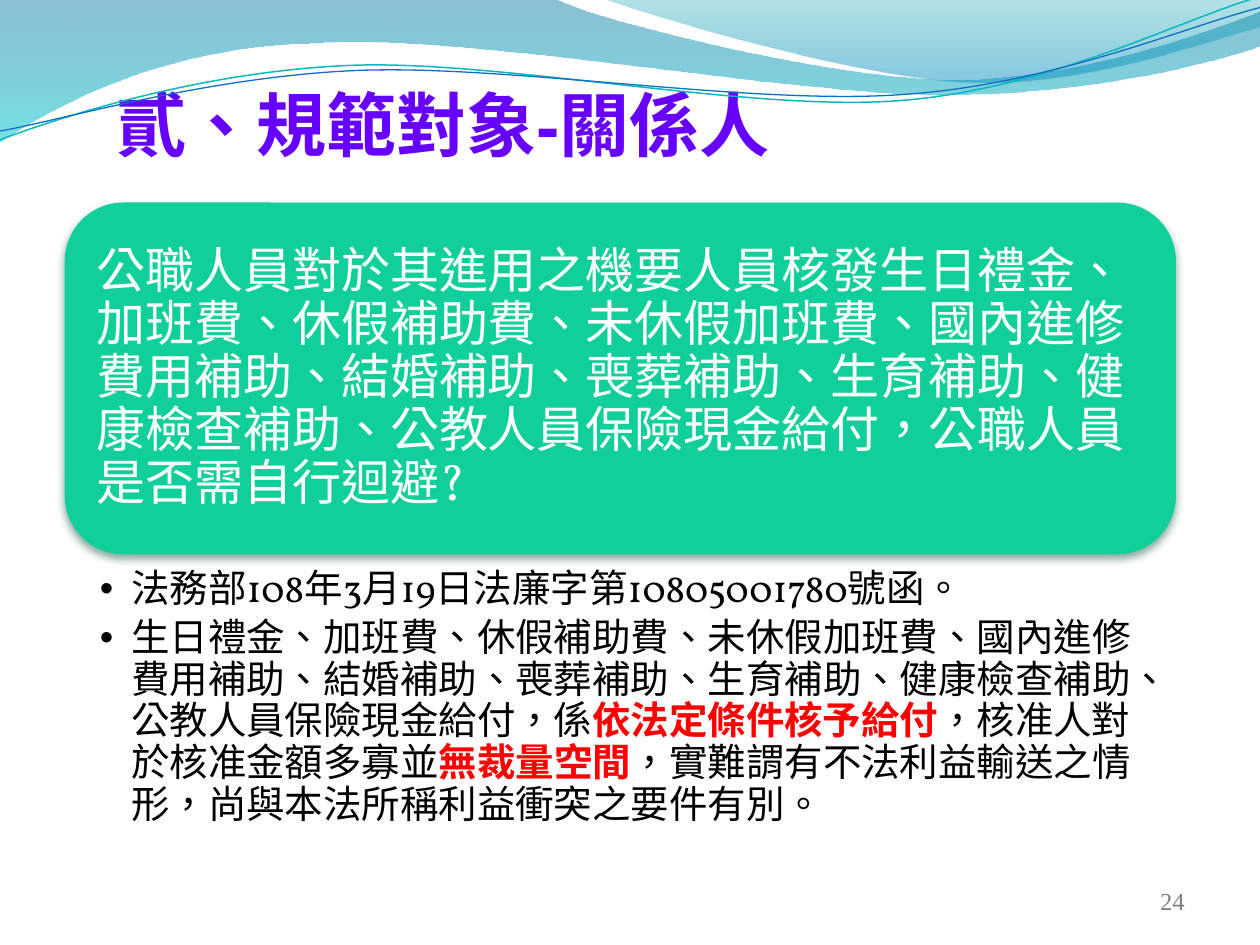
"""Build the slide on related persons and allowance payments."""
from lxml.etree import SubElement
from pptx import Presentation
from pptx.dml.color import RGBColor
from pptx.enum.shapes import MSO_SHAPE
from pptx.enum.text import MSO_ANCHOR, MSO_AUTO_SIZE, PP_ALIGN
from pptx.oxml.ns import qn
from pptx.util import Pt

PURPLE = RGBColor(0x66, 0x00, 0xFF)
GREEN = RGBColor(0x10, 0xCF, 0x9B)
WHITE = RGBColor(0xFF, 0xFF, 0xFF)
BLACK = RGBColor(0, 0, 0)
RED = RGBColor(0xFF, 0, 0)
GRAY = RGBColor(0x7F, 0x7F, 0x7F)
OCEAN = RGBColor(0x00, 0x74, 0xA1)
AQUA = RGBColor(0x00, 0xC6, 0xCF)
TEAL = RGBColor(0x00, 0xA1, 0xA9)
SKY = RGBColor(0x00, 0x8B, 0xBF)
CYAN = RGBColor(0x0A, 0xB8, 0xBF)
BLUE = RGBColor(0x0F, 0x6F, 0xC6)

deck = Presentation()
deck.slide_width, deck.slide_height = Pt(720), Pt(540)
slide = deck.slides.add_slide(deck.slide_layouts[5])
shapes = slide.shapes


def draw(start, parts, close):
    """Draw straight parts (one point) and Bezier parts (three points), in 1/100 inch."""
    pen = shapes.build_freeform(*start, scale=Pt(0.72))
    pen.add_line_segments([dot for part in parts for dot in part], close=close)
    shape = pen.convert_to_shape()
    shape.shadow.inherit = False
    lines = list(shape._element.iter(qn("a:lnTo")))
    for part in parts:
        group, lines = lines[:len(part)], lines[len(part):]
        if len(part) == 3:
            group[0].tag = qn("a:cubicBezTo")
            for line in group[1:]:
                group[0].append(line[0])
                line.getparent().remove(line)
    return shape


def write(para, text, font, size, color):
    """Add a run of Chinese text and set the paragraph font."""
    run = para.add_run()
    run.text = text
    run._r.get_or_add_rPr().set("lang", "zh-TW")
    para.font.name, para.font.size, para.font.color.rgb = font, Pt(size), color
    return run


waves = [
    ((0, 0), [
        [(440, -1)],
        [(476, 17), (664, 63), (758, 63)],
        [(853, 63), (958, 26), (1000, 9)],
        [(1001, 36)],
        [(983, 44), (870, 76), (746, 75)],
        [(622, 75), (382, 28), (257, 34)],
        [(129, 36), (46, 83), (-1, 113)],
    ], [(0, OCEAN, 45), (1, AQUA, 55)]),
    ((479, -1), [
        [(509, 11), (682, 62), (769, 65)],
        [(856, 69), (961, 32), (1000, 21)],
        [(1000, 0)],
    ], [(0, TEAL, 30), (0.8, SKY, 45)]),
]
for start, parts, stops in waves:
    wave = draw(start, parts, True)
    wave.line.fill.background()
    wave.fill.gradient()
    wave.fill.gradient_angle = 270
    for stop, (place, color, alpha) in zip(wave.fill.gradient_stops, stops):
        stop.position, stop.color.rgb = place, color
    for node, (place, color, alpha) in zip(wave._element.spPr.iter(qn("a:srgbClr")), stops):
        SubElement(node, qn("a:alpha"), val=str(alpha * 1000))

curves = [
    ((0, 111), [
        [(48, 93), (158, 57), (277, 52)],
        [(395, 47), (593, 89), (713, 80)],
        [(833, 71), (938, 15), (998, -2)],
    ], CYAN, 0.85),
    ((0, 104), [
        [(47, 96), (164, 61), (283, 56)],
        [(403, 51), (597, 84), (717, 75)],
        [(836, 67), (941, 21), (1000, 6)],
    ], BLUE, 0.75),
]
for start, parts, color, width in curves:
    curve = draw(start, parts, False)
    curve.fill.background()
    curve.line.color.rgb, curve.line.width = color, Pt(width)

title = shapes.title
title.left, title.top, title.width, title.height = Pt(59.5), Pt(43), Pt(516), Pt(55.5)
frame = title.text_frame
frame.vertical_anchor, frame.auto_size = MSO_ANCHOR.TOP, MSO_AUTO_SIZE.NONE
para = frame.paragraphs[0]
para.alignment = PP_ALIGN.LEFT
para.font.bold = True
write(para, "貳、規範對象-關係人", "Arial", 40, PURPLE)

page = shapes.add_textbox(Pt(516), Pt(500), Pt(168), Pt(29))
page.text_frame.word_wrap = True
page.text_frame.vertical_anchor = MSO_ANCHOR.MIDDLE
para = page.text_frame.paragraphs[0]
para.alignment = PP_ALIGN.RIGHT
write(para, "24", "Times New Roman", 14, GRAY)

card = shapes.add_shape(MSO_SHAPE.ROUNDED_RECTANGLE, Pt(37), Pt(115.75), Pt(635), Pt(201))
card.fill.solid()
card.fill.fore_color.rgb = GREEN
card.line.fill.background()
card.shadow.inherit = False
glow = SubElement(card._element.spPr.find(qn("a:effectLst")), qn("a:outerShdw"),
                  blurRad=str(Pt(4.5)), dist=str(Pt(3)), dir="5400000", rotWithShape="0")
tint = SubElement(glow, qn("a:srgbClr"), val="044A37")
SubElement(tint, qn("a:alpha"), val="48000")
frame = card.text_frame
frame.word_wrap, frame.vertical_anchor = True, MSO_ANCHOR.MIDDLE
frame.margin_left = frame.margin_right = frame.margin_top = frame.margin_bottom = Pt(8.4)
para = frame.paragraphs[0]
para.alignment, para.line_spacing = PP_ALIGN.LEFT, 0.9
grants = ("生日禮金、加班費、休假補助費、未休假加班費、國內進修費用補助、結婚補助、"
          "喪葬補助、生育補助、健康檢查補助、公教人員保險現金給付，")
write(para, "公職人員對於其進用之機要人員核發" + grants + "公職人員是否需自行迴避?",
      "Vollkorn", 28, WHITE)

notes = [
    [("法務部108年3月19日法廉字第10805001780號函。", False)],
    [(grants + "係", False),
     ("依法定條件核予給付", True),
     ("，核准人對於核准金額多寡並", False),
     ("無裁量空間", True),
     ("，實難謂有不法利益輸送之情形，尚與本法所稱利益衝突之要件有別。", False)],
]
body = shapes.add_textbox(Pt(37), Pt(322.5), Pt(635), Pt(197))
frame = body.text_frame
frame.word_wrap = True
frame.margin_left, frame.margin_right = Pt(20), Pt(16)
frame.margin_top = frame.margin_bottom = Pt(2.8)
for index, note in enumerate(notes):
    para = frame.add_paragraph() if index else frame.paragraphs[0]
    para.line_spacing, para.space_after = 0.9, Pt(4.4)
    props = para._p.get_or_add_pPr()
    props.set("marL", str(Pt(18)))
    props.set("indent", str(-Pt(18)))
    SubElement(props, qn("a:buFont"), typeface="Arial")
    SubElement(props, qn("a:buChar"), char="•")
    for text, strong in note:
        run = write(para, text, "Vollkorn", 22, BLACK)
        if strong:
            run.font.bold, run.font.color.rgb = True, RED

deck.save("out.pptx")
